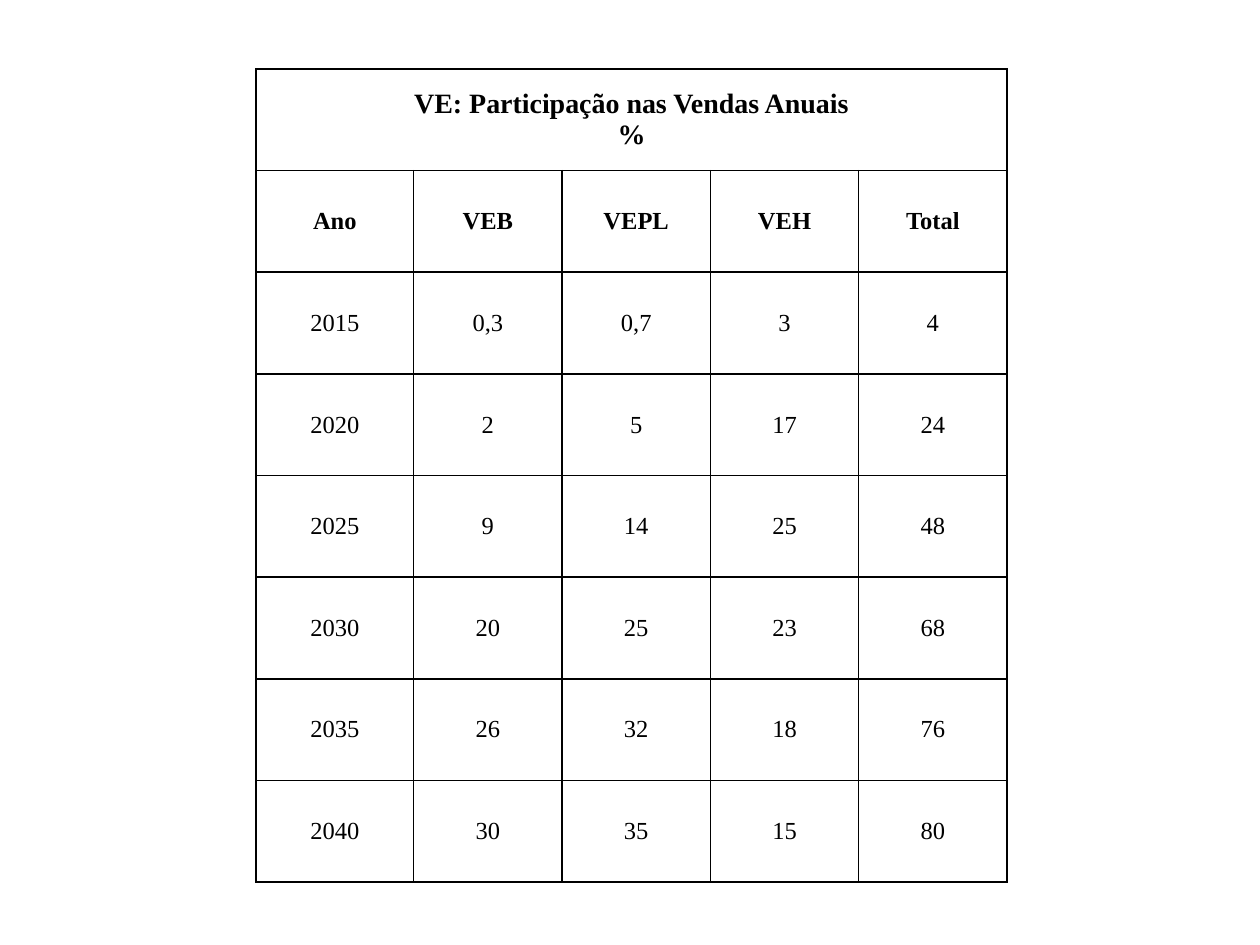
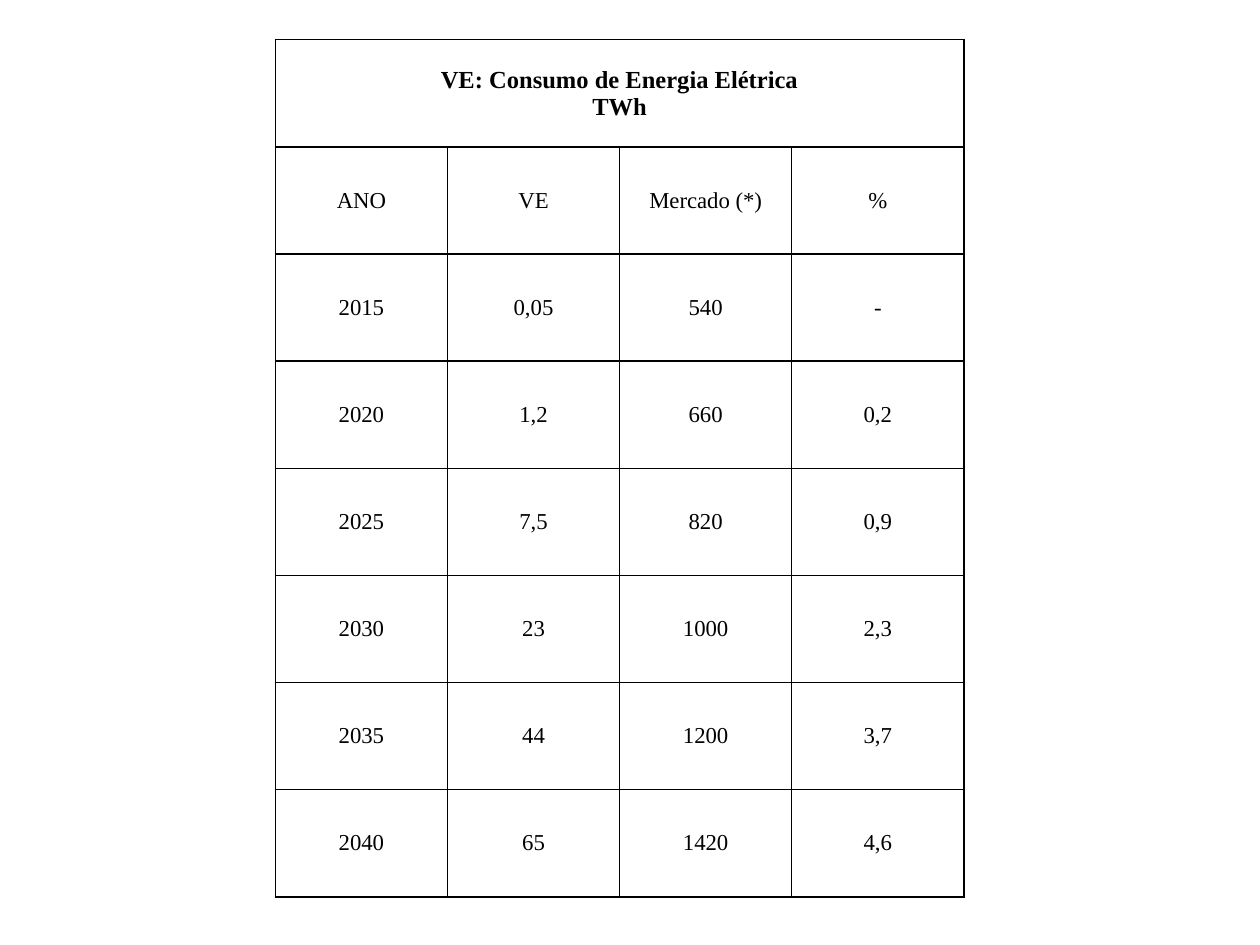
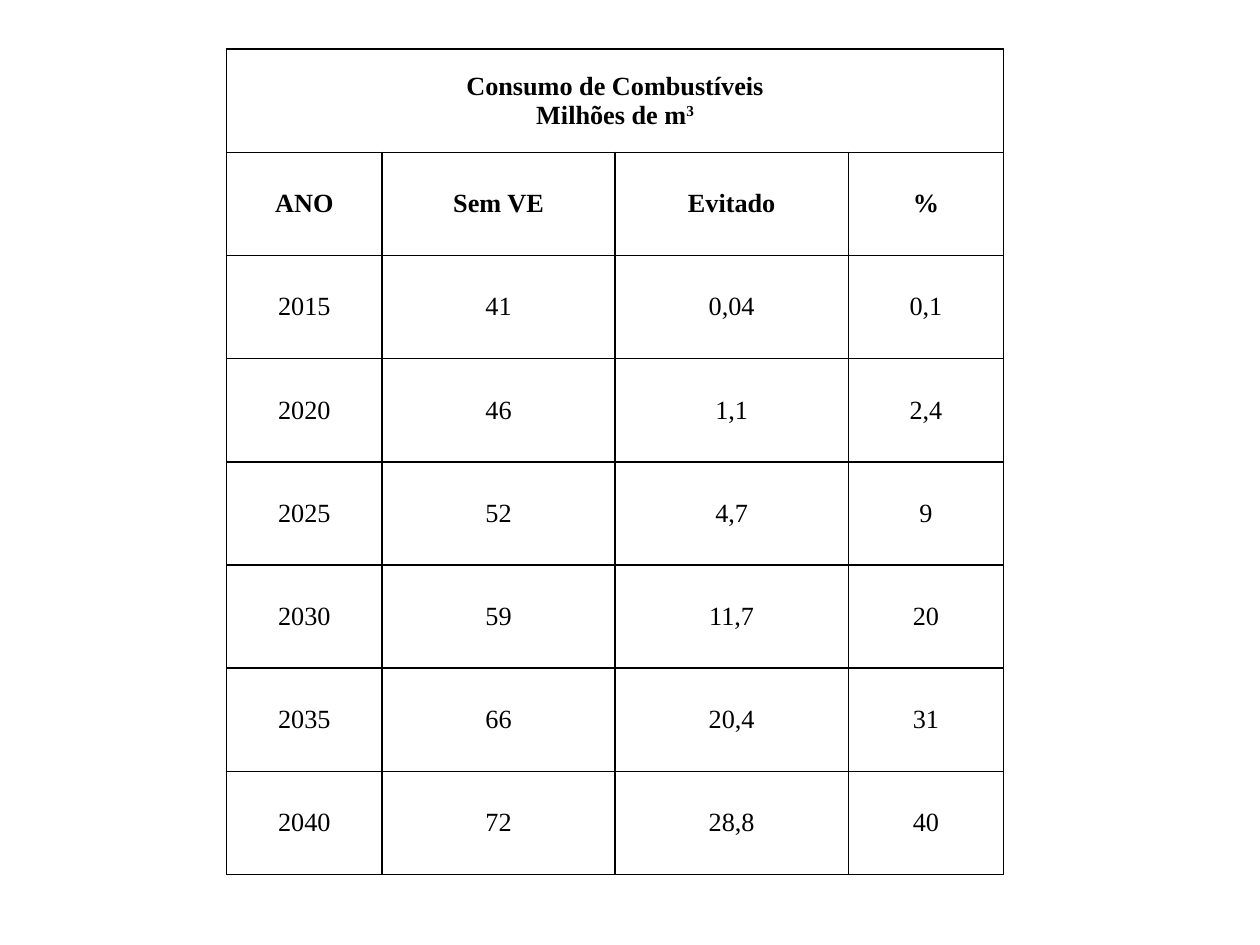
"""Build three slides of tables on electric vehicle sales, power use and fuel use."""
from dataclasses import dataclass
from lxml.etree import SubElement
from pptx import Presentation
from pptx.dml.color import RGBColor
from pptx.enum.text import MSO_ANCHOR, PP_ALIGN
from pptx.oxml.ns import qn
from pptx.util import Cm, Pt


@dataclass(frozen=True)
class Theme:
    font: str = "Times New Roman"
    ink: str = "000000"
    line: int = Pt(1)
    raised: str = "30000"
    large: int = Pt(16)
    mid: int = Pt(15)
    base: int = Pt(14)
    small: int = Pt(13)


theme = Theme()


def write(cell, lines, size, bold):
    for i, line in enumerate(lines):
        para = cell.text_frame.paragraphs[0] if i == 0 else cell.text_frame.add_paragraph()
        para.alignment = PP_ALIGN.CENTER
        for j, text in enumerate(line.split("^")):
            run = para.add_run()
            run.text = text
            run.font.name = theme.font
            run.font.size = size
            run.font.bold = bold
            run.font.color.rgb = RGBColor.from_string(theme.ink)
            if j == 1:
                run.font._element.set("baseline", theme.raised)


def frame(cell, inset):
    cell.vertical_anchor = MSO_ANCHOR.MIDDLE
    cell.margin_left = cell.margin_right = Cm(inset)
    cell.margin_top = cell.margin_bottom = 0
    props = cell._tc.get_or_add_tcPr()
    for side in ("lnL", "lnR", "lnT", "lnB"):
        edge = SubElement(props, qn(f"a:{side}"), w=str(theme.line))
        fill = SubElement(edge, qn("a:solidFill"))
        SubElement(fill, qn("a:srgbClr"), val=theme.ink)
    cell.fill.background()


years = ["2015", "2020", "2025", "2030", "2035", "2040"]

sales = dict(
    left=5.16, top=1.39, high=2.05, wide=[3.18] + [2.99] * 4, inset=0.15,
    title=["VE: Participação nas Vendas Anuais", "%"],
    heads=["Ano", "VEB", "VEPL", "VEH", "Total"], bold=True,
    sizes=(theme.large, theme.base),
    data=[
        ["0,3", "0,7", "3", "4"],
        ["2", "5", "17", "24"],
        ["9", "14", "25", "48"],
        ["20", "25", "23", "68"],
        ["26", "32", "18", "76"],
        ["30", "35", "15", "80"],
    ],
)

power = dict(
    left=5.55, top=0.8, high=2.16, wide=[3.47] * 4, inset=0.13,
    title=["VE: Consumo de Energia Elétrica", "TWh"],
    heads=["ANO", "VE", "Mercado (*)", "%"], bold=False,
    sizes=(theme.base, theme.small),
    data=[
        ["0,05", "540", "-"],
        ["1,2", "660", "0,2"],
        ["7,5", "820", "0,9"],
        ["23", "1000", "2,3"],
        ["44", "1200", "3,7"],
        ["65", "1420", "4,6"],
    ],
)

fuel = dict(
    left=4.57, top=0.99, high=2.08, wide=[3.13, 4.7, 4.7, 3.13], inset=0.15,
    title=["Consumo de Combustíveis", "Milhões de m^3"],
    heads=["ANO", "Sem VE", "Evitado", "%"], bold=True,
    sizes=(theme.mid, theme.mid),
    data=[
        ["41", "0,04", "0,1"],
        ["46", "1,1", "2,4"],
        ["52", "4,7", "9"],
        ["59", "11,7", "20"],
        ["66", "20,4", "31"],
        ["72", "28,8", "40"],
    ],
)

deck = Presentation()
deck.slide_width, deck.slide_height = Cm(25.4), Cm(19.05)

for part in (sales, power, fuel):
    slide = deck.slides.add_slide(deck.slide_layouts[6])
    wide, high = part["wide"], part["high"]
    rows = [part["heads"]] + [[year] + vals for year, vals in zip(years, part["data"])]
    count = len(rows) + 1
    table = slide.shapes.add_table(
        count, len(wide), Cm(part["left"]), Cm(part["top"]), Cm(sum(wide)), Cm(high * count)
    ).table
    table.first_row = table.horz_banding = False
    for col, width in zip(table.columns, wide):
        col.width = Cm(width)
    for row in table.rows:
        row.height = Cm(high)
    for cell in table.iter_cells():
        frame(cell, part["inset"])

    large, small = part["sizes"]
    head = table.cell(0, 0)
    head.merge(table.cell(0, len(wide) - 1))
    write(head, part["title"], large, True)
    for r, row in enumerate(rows, 1):
        for c, text in enumerate(row):
            write(table.cell(r, c), [text], small, part["bold"] and r == 1)

deck.save("out.pptx")
